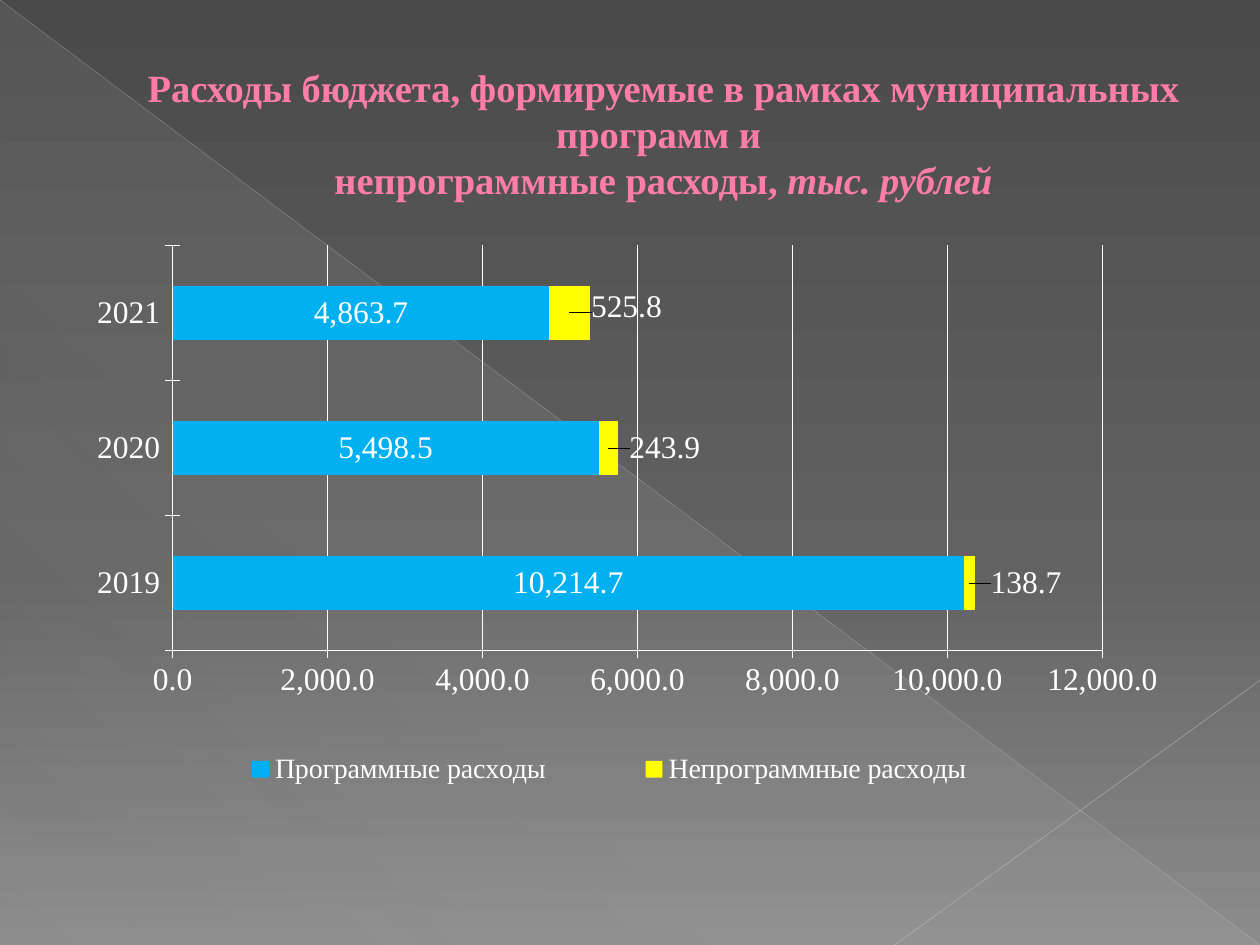
from dataclasses import dataclass

from lxml import etree
from pptx import Presentation, util as u
from pptx.chart.data import CategoryChartData
from pptx.dml.color import RGBColor
from pptx.enum import chart as ch, shapes, text
from pptx.oxml import parse_xml
from pptx.oxml.ns import nsdecls, qn


@dataclass(frozen=True)
class Theme:
    font: str = "Times New Roman"
    title: str = "FF7DA7"
    title_outline: str = "B12761"
    ink: str = "FFFFFF"
    title_size: float = 22
    chart_size: float = 18
    legend_size: float = 16


@dataclass(frozen=True)
class Stop:
    pos: int
    color: str
    alpha: int = 100


@dataclass(frozen=True)
class Ray:
    start: tuple[float, float]
    end: tuple[float, float]
    color: str
    width: float
    alpha: int


@dataclass(frozen=True)
class Series:
    name: str
    values: tuple[float, ...]
    color: str
    label_shifts: tuple[tuple[float, float], ...] = ()


THEME = Theme()
W, H = 10, 7.5
NUMBER = "#,##0.0"
YEARS = ("2019", "2020", "2021")
BACKGROUND = (Stop(0, "4A4A4A"), Stop(60, "626262"), Stop(100, "8C8C8C"))
SHEEN = (Stop(0, "D2D2D2", 10), Stop(70, "D2D2D2", 8), Stop(100, "D2D2D2", 1))
# Ends are shares of the slide's size
RAYS = (
    Ray((0, 0), (1, 1), "BFBFBF", 0.39, 35),
    Ray((1, 0.72), (0.71, 1), "C6C6C6", 0.47, 45),
)
# Label shifts are shares of the chart's size
SERIES = (
    Series("Программные расходы", (10214.7, 5498.5, 4863.7), "00B0F0"),
    Series("Непрограммные расходы", (138.7, 243.9, 525.8), "FFFF00",
           ((0.05, 0), (0.05, 0), (0.05, -0.01))),
)


def rgb(color: str) -> RGBColor:
    return RGBColor.from_string(color)


def color_xml(color: str, alpha: int = 100) -> str:
    return f'<a:srgbClr val="{color}"><a:alpha val="{alpha * 1000}"/></a:srgbClr>'


def gradient(stops: tuple[Stop, ...], angle: int):
    gs = "".join(f'<a:gs pos="{s.pos * 1000}">{color_xml(s.color, s.alpha)}</a:gs>' for s in stops)
    return parse_xml(f'<a:gradFill {nsdecls("a")} rotWithShape="1"><a:gsLst>{gs}</a:gsLst>'
                     f'<a:lin ang="{angle * 60000}" scaled="0"/></a:gradFill>')


def set_gradient(fill, parent, stops: tuple[Stop, ...], angle: int) -> None:
    fill.gradient()
    old = parent.find(qn("a:gradFill"))
    parent.replace(old, gradient(stops, angle))


def set_font(font, size: float, color: str = THEME.ink) -> None:
    font.name, font.size = THEME.font, u.Pt(size)
    font.color.rgb = rgb(color)


def white_line(line) -> None:
    line.color.rgb, line.width = rgb(THEME.ink), u.Pt(0.75)


def draw_backdrop(s) -> None:
    fill = s.background.fill
    set_gradient(fill, s._element.find(".//" + qn("p:bgPr")), BACKGROUND, 90)
    sp = s.shapes.add_shape(shapes.MSO_SHAPE.RIGHT_TRIANGLE, 0, 0, u.Inches(W), u.Inches(H))
    sp.shadow.inherit = False
    set_gradient(sp.fill, sp._element.spPr, SHEEN, 133)
    sp.line.fill.background()
    for ray in RAYS:
        ends = [u.Inches(share * side) for point in (ray.start, ray.end)
                for share, side in zip(point, (W, H))]
        line = s.shapes.add_connector(shapes.MSO_CONNECTOR.STRAIGHT, *ends)
        line.line.color.rgb, line.line.width = rgb(ray.color), u.Pt(ray.width)
        clr = line._element.spPr.find(".//" + qn("a:srgbClr"))
        etree.SubElement(clr, qn("a:alpha")).set("val", str(ray.alpha * 1000))
        etree.SubElement(line._element.spPr, qn("a:effectLst"))


def draw_title(s) -> None:
    sp = s.shapes.title
    s.shapes._spTree.append(sp._element)  # bring in front of the backdrop
    sp.left, sp.top, sp.width, sp.height = map(u.Inches, (0.5, 0.29, 9, 1.53))
    tf = sp.text_frame
    tf.word_wrap, tf.auto_size = True, text.MSO_AUTO_SIZE.NONE
    tf.vertical_anchor = text.MSO_ANCHOR.MIDDLE
    p = tf.paragraphs[0]
    p.alignment = text.PP_ALIGN.CENTER
    p._p.get_or_add_pPr().set("marL", str(u.Inches(0.53)))
    p.add_run().text = "Расходы бюджета, формируемые в рамках муниципальных программ и "
    p.add_line_break()
    p.add_run().text = "непрограммные расходы, "
    p.add_run().text = "тыс. рублей"
    for r in p.runs:
        set_font(r.font, THEME.title_size, THEME.title)
        r.font.bold = True
        r._r.get_or_add_rPr().insert(0, parse_xml(
            f'<a:ln {nsdecls("a")} w="{u.Pt(0.5)}"><a:solidFill>'
            f'{color_xml(THEME.title_outline)}</a:solidFill></a:ln>'))
    p.runs[-1].font.italic = True


def layout(x: float, y: float, w: float = 0, h: float = 0, inner: bool = False):
    """Manual chart layout; without a size it is a shift from the default place."""
    parts = [("layoutTarget", "inner")] if inner else []
    if w:
        parts += [("xMode", "edge"), ("yMode", "edge")]
    parts += [("x", x), ("y", y)]
    if w:
        parts += [("w", w), ("h", h)]
    body = "".join(f'<c:{tag} val="{val}"/>' for tag, val in parts)
    return parse_xml(f'<c:layout {nsdecls("c")}><c:manualLayout>{body}</c:manualLayout></c:layout>')


def place(parent, new, after: str | None = None) -> None:
    for old in parent.findall(qn("c:layout")):
        parent.remove(old)
    if after:
        parent.find(qn(after)).addnext(new)
    else:
        parent.insert(0, new)


def format_series(ser, spec: Series) -> None:
    ser.format.fill.solid()
    ser.format.fill.fore_color.rgb = rgb(spec.color)
    labels = ser.data_labels
    labels.show_value = True
    labels.number_format, labels.number_format_is_linked = NUMBER, False
    set_font(labels.font, THEME.chart_size)
    for i, shift in enumerate(spec.label_shifts):
        label = ser.points[i].data_label
        set_font(label.font, THEME.chart_size)
        place(ser._element.findall(".//" + qn("c:dLbl"))[i], layout(*shift), "c:idx")


def draw_chart(s) -> None:
    data = CategoryChartData(number_format=NUMBER)
    data.categories = YEARS
    for spec in SERIES:
        data.add_series(spec.name, spec.values)
    chart = s.shapes.add_chart(ch.XL_CHART_TYPE.BAR_STACKED,
                               *map(u.Inches, (0.47, 1.8, 9, 4.95)), data).chart
    set_font(chart.font, THEME.chart_size)
    chart.has_title = False
    plot = chart.plots[0]
    plot.gap_width, plot.overlap, plot.vary_by_categories = 150, 100, False
    for ser, spec in zip(plot.series, SERIES):
        format_series(ser, spec)

    # Axes
    for axis in (chart.category_axis, chart.value_axis):
        axis.major_tick_mark = ch.XL_TICK_MARK.CROSS
        set_font(axis.tick_labels.font, THEME.chart_size)
        white_line(axis.format.line)
    axis = chart.value_axis
    axis.minimum_scale, axis.maximum_scale, axis.major_unit = 0, 12000, 2000
    axis.tick_labels.number_format, axis.tick_labels.number_format_is_linked = NUMBER, False
    axis.has_major_gridlines = True
    white_line(axis.major_gridlines.format.line)

    # Legend and plot area
    chart.has_legend = True
    chart.legend.position = ch.XL_LEGEND_POSITION.RIGHT
    chart.legend.include_in_layout = False
    set_font(chart.legend.font, THEME.legend_size)
    place(chart.legend._element, layout(0.09, 0.82, 0.79, 0.1), "c:legendPos")
    place(chart._chartSpace.chart.plotArea, layout(0.1, 0.03, 0.82, 0.65, inner=True))


def main() -> None:
    prs = Presentation()
    prs.slide_width, prs.slide_height = u.Inches(W), u.Inches(H)
    s = prs.slides.add_slide(prs.slide_layouts[5])
    draw_backdrop(s)
    draw_title(s)
    draw_chart(s)
    prs.save("out.pptx")


if __name__ == "__main__":
    main()
